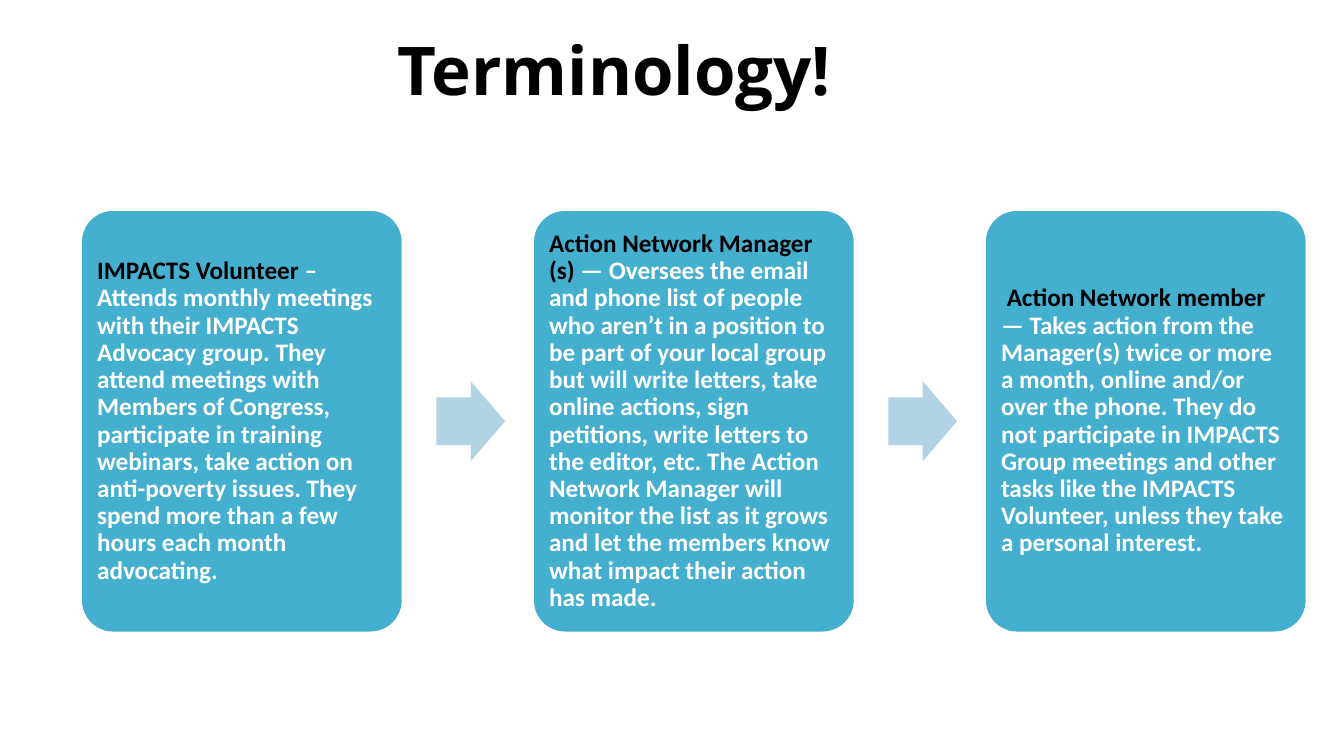
from dataclasses import dataclass

from pptx import Presentation
from pptx.dml.color import RGBColor
from pptx.enum.shapes import MSO_SHAPE
from pptx.enum.text import MSO_ANCHOR, PP_ALIGN
from pptx.slide import Slide
from pptx.text.text import TextFrame, _Paragraph
from pptx.util import Cm, Pt

ROUNDED = MSO_SHAPE.ROUNDED_RECTANGLE
ARROW = MSO_SHAPE.RIGHT_ARROW
MIDDLE = MSO_ANCHOR.MIDDLE
LEFT, CENTER = PP_ALIGN.LEFT, PP_ALIGN.CENTER


@dataclass(frozen=True)
class Theme:
    black: RGBColor = RGBColor(0x00, 0x00, 0x00)
    white: RGBColor = RGBColor(0xFF, 0xFF, 0xFF)
    card: RGBColor = RGBColor(0x45, 0xAF, 0xD0)
    arrow: RGBColor = RGBColor(0xB1, 0xD4, 0xE4)
    title_font: str = "Open Sans"
    body_font: str = "Calibri"
    title_size: Pt = Pt(48)
    body_size: Pt = Pt(18)
    outline: Pt = Pt(2)


@dataclass(frozen=True)
class Role:
    name: str
    duties: str
    lead: str = ""


THEME = Theme()
TITLE = "Terminology! "
ROLES = [
    Role(
        "IMPACTS Volunteer",
        " – Attends monthly meetings with their IMPACTS Advocacy group. "
        "They attend meetings with Members of Congress, participate in training "
        "webinars, take action on anti-poverty issues. They spend more than a few "
        "hours each month advocating. ",
    ),
    Role(
        "Action Network Manager (s)",
        " — Oversees the email and phone list of people who aren’t in a position "
        "to be part of your local group but will write letters, take online "
        "actions, sign petitions, write letters to the editor, etc. The Action "
        "Network Manager will monitor the list as it grows and let the members "
        "know what impact their action has made. ",
    ),
    Role(
        "Action Network member",
        " — Takes action from the Manager(s) twice or more a month, online and/or "
        "over the phone. They do not participate in IMPACTS Group meetings and "
        "other tasks like the IMPACTS Volunteer, unless they take a personal "
        "interest. ",
        lead=" ",
    ),
]
CARD_LEFT, CARD_TOP, CARD_W, CARD_H = 2.03, 5.28, 8.13, 10.67
ARROW_LEFT, ARROW_W, ARROW_H = 11.0, 1.73, 2.01
PITCH = 11.39
INSET = 0.18


def set_all(target: object, values: dict) -> None:
    for name, value in values.items():
        setattr(target, name, value)


def add_run(p: _Paragraph, text: str, font: str, size: Pt, color: RGBColor) -> None:
    r = p.add_run()
    r.text = text
    set_all(r.font, {"name": font, "size": size, "bold": True})
    r.font.color.rgb = color


def format_frame(tf: TextFrame, align: PP_ALIGN, **values: object) -> _Paragraph:
    set_all(tf, {"word_wrap": True, "vertical_anchor": MIDDLE, **values})
    p = tf.paragraphs[0]
    p.alignment = align
    return p


def add_title(s: Slide) -> None:
    sp = s.shapes.add_textbox(Cm(2), Cm(0.28), Cm(27.41), Cm(3.18))
    p = format_frame(sp.text_frame, CENTER)
    p.line_spacing = 0.9
    add_run(p, TITLE, THEME.title_font, THEME.title_size, THEME.black)


def add_card(s: Slide, left: float, role: Role) -> None:
    sp = s.shapes.add_shape(ROUNDED, Cm(left), Cm(CARD_TOP), Cm(CARD_W), Cm(CARD_H))
    sp.adjustments[0] = 0.1
    sp.shadow.inherit = False
    sp.fill.solid()
    sp.fill.fore_color.rgb = THEME.card
    sp.line.color.rgb = THEME.white
    sp.line.width = THEME.outline
    sides = ("left", "top", "right", "bottom")
    margins = {f"margin_{side}": Cm(INSET) for side in sides}
    p = format_frame(sp.text_frame, LEFT, **margins)
    p.line_spacing = 0.9
    parts = (
        (role.lead, THEME.white),
        (role.name, THEME.black),
        (role.duties, THEME.white),
    )
    for text, color in parts:
        if text:
            add_run(p, text, THEME.body_font, THEME.body_size, color)


def add_arrow(s: Slide, left: float) -> None:
    top = CARD_TOP + (CARD_H - ARROW_H) / 2
    sp = s.shapes.add_shape(ARROW, Cm(left), Cm(top), Cm(ARROW_W), Cm(ARROW_H))
    sp.adjustments[0] = 0.6
    sp.adjustments[1] = 0.5
    sp.shadow.inherit = False
    sp.fill.solid()
    sp.fill.fore_color.rgb = THEME.arrow
    sp.line.fill.background()


def main() -> None:
    prs = Presentation()
    set_all(prs, {"slide_width": Cm(33.87), "slide_height": Cm(19.05)})
    s = prs.slides.add_slide(prs.slide_layouts[6])
    add_title(s)
    for i, role in enumerate(ROLES):
        add_card(s, CARD_LEFT + i * PITCH, role)
        if i < len(ROLES) - 1:
            add_arrow(s, ARROW_LEFT + i * PITCH)
    prs.save("out.pptx")


if __name__ == "__main__":
    main()
